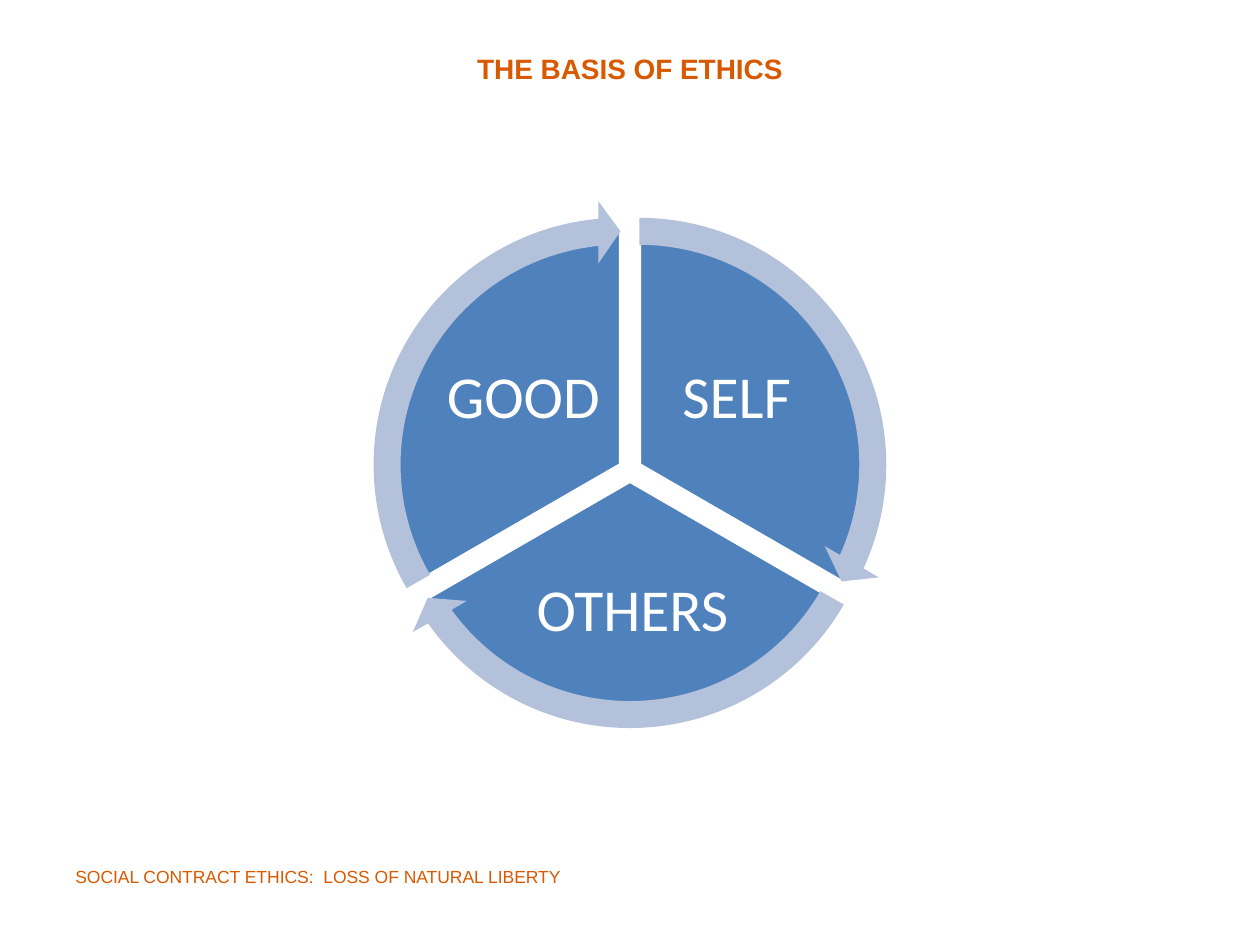
from dataclasses import dataclass

from pptx import Presentation
from pptx.dml.color import RGBColor
from pptx.enum.shapes import MSO_SHAPE
from pptx.enum.text import MSO_ANCHOR, PP_ALIGN
from pptx.util import Cm, Pt


@dataclass(frozen=True)
class Theme:
    orange: RGBColor = RGBColor(0xD9, 0x59, 0x00)
    blue: RGBColor = RGBColor(0x4F, 0x81, 0xBD)
    pale_blue: RGBColor = RGBColor(0xB3, 0xC1, 0xDB)
    white: RGBColor = RGBColor(0xFF, 0xFF, 0xFF)
    title_size: Pt = Pt(16)
    footer_size: Pt = Pt(10)
    label_size: Pt = Pt(34)


theme = Theme()


def write(box, text, font_name, size, color, align):
    frame = box.text_frame
    frame.word_wrap = True
    frame.vertical_anchor = MSO_ANCHOR.MIDDLE
    para = frame.paragraphs[0]
    para.text = text
    para.alignment = align
    para.font.name = font_name
    para.font.size = size
    para.font.color.rgb = color
    return para


def add_round_shape(kind, center_x, center_y, diameter, adjustments, color):
    """Add a filled shape centred on a point; lengths are in centimetres."""
    shape = cycle.shapes.add_shape(
        kind, Cm(center_x - diameter / 2), Cm(center_y - diameter / 2),
        Cm(diameter), Cm(diameter))
    for index, value in enumerate(adjustments):
        shape.adjustments[index] = value
    shape.shadow.inherit = False
    shape.fill.solid()
    shape.fill.fore_color.rgb = color
    return shape


deck = Presentation()
deck.slide_width, deck.slide_height = Cm(25.4), Cm(19.05)
page = deck.slides.add_slide(deck.slide_layouts[5])

title = page.shapes.title
title.left, title.top, title.width, title.height = Cm(1.27), Cm(0.64), Cm(22.86), Cm(1.47)
para = write(title, "THE BASIS OF ETHICS", "Arial", theme.title_size,
             theme.orange, PP_ALIGN.CENTER)
para.font.bold = True

footer = page.shapes.add_textbox(Cm(1.27), Cm(17.35), Cm(14.81), Cm(0.64))
write(footer, "SOCIAL CONTRACT ETHICS:  LOSS OF NATURAL LIBERTY", "Arial",
      theme.footer_size, theme.orange, PP_ALIGN.LEFT)

# Cycle: label, start and end angle, shift from the centre, label box
center_x, center_y = 12.7, 9.7
pie_diameter, arrow_diameter = 9.47, 10.67
units_per_degree = 0.6  # angle adjustments count 60000 per degree, scaled by 100000
head_angle = 5.46
sectors = [
    ("SELF", 270, 30, 0.19, -0.33, (13.16, 6.63, 3.38, 2.82)),
    ("OTHERS", 30, 150, 0, 0, (10.21, 11.1, 5.08, 2.49)),
    ("GOOD", 150, 270, -0.19, -0.33, (8.86, 6.63, 3.38, 2.82)),
]
cycle = page.shapes.add_group_shape()

for label, start, end, shift_x, shift_y, label_area in sectors:
    pie = add_round_shape(
        MSO_SHAPE.PIE, center_x + shift_x, center_y + shift_y, pie_diameter,
        (start * units_per_degree, end * units_per_degree), theme.blue)
    pie.line.color.rgb = theme.white
    pie.line.width = Pt(2)

    box = cycle.shapes.add_textbox(*(Cm(length) for length in label_area))
    frame = box.text_frame
    frame.margin_left = frame.margin_right = Cm(0.13)
    frame.margin_top = frame.margin_bottom = Cm(0.13)
    para = write(box, label, "Calibri", theme.label_size, theme.white, PP_ALIGN.CENTER)
    para.line_spacing = 0.9

for label, start, end, shift_x, shift_y, label_area in sectors:
    arrow = add_round_shape(
        MSO_SHAPE.CIRCULAR_ARROW, center_x + shift_x, center_y + shift_y, arrow_diameter,
        (0.051, head_angle * units_per_degree, (end - head_angle) * units_per_degree,
         start * units_per_degree, 0.059), theme.pale_blue)
    arrow.line.fill.background()

deck.save("out.pptx")
